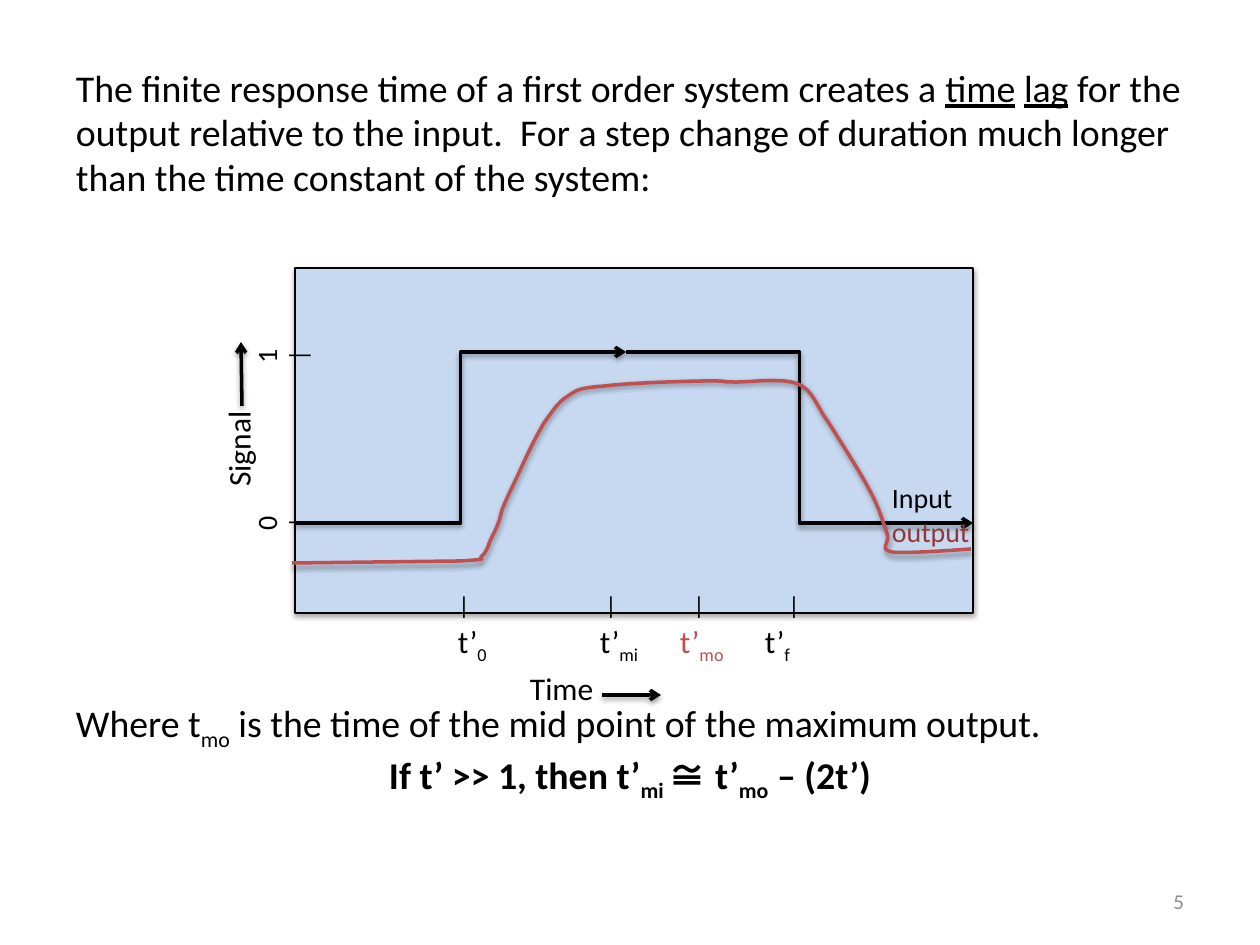
from dataclasses import dataclass

from lxml import etree
from pptx import Presentation
from pptx.dml.color import RGBColor
from pptx.enum.shapes import MSO_CONNECTOR, MSO_SHAPE
from pptx.enum.text import MSO_ANCHOR, PP_ALIGN
from pptx.oxml.ns import qn
from pptx.util import Emu, Pt

LINE, ELBOW = MSO_CONNECTOR.STRAIGHT, MSO_CONNECTOR.ELBOW
RECT = MSO_SHAPE.RECTANGLE
LEFT, MID, RIGHT = PP_ALIGN.LEFT, PP_ALIGN.CENTER, PP_ALIGN.RIGHT
TOP, CENTRE = MSO_ANCHOR.TOP, MSO_ANCHOR.MIDDLE
SCALE = 914400 / 126


@dataclass(frozen=True)
class Theme:
    """Colours, fonts and type sizes of the slide."""
    ink: str = "000000"
    panel: str = "C6D9F1"
    curve: str = "C0504D"
    dark: str = "953735"
    grey: str = "8C8C8C"
    font: str = "Calibri"
    math: str = "Noto Sans CJK JP"
    body: float = 21.6
    label: int = 18
    value: int = 16
    tick: int = 14
    small: int = 12


THEME = Theme()
CURVE = [
    (-3, 295), (-3, 295), (166, 293), (166, 293),
    (198, 291), (183, 291), (186, 289), (191, 286), (194, 276), (194, 276),
    (196, 270), (200, 264), (203, 256), (206, 250), (205, 245), (210, 235),
    (214, 225), (222, 210), (228, 196), (234, 183), (242, 167), (249, 155),
    (257, 144), (263, 134), (273, 128), (283, 121), (286, 120), (310, 118),
    (334, 115), (394, 113), (416, 113), (437, 113), (423, 114), (437, 114),
    (451, 115), (486, 109), (503, 116), (519, 123), (521, 138), (534, 155),
    (545, 173), (564, 202), (574, 221), (584, 239), (588, 254), (592, 265),
    (596, 275), (583, 281), (597, 284), (611, 286), (676, 281), (676, 281),
]


def px(n):
    """Turn px into EMU."""
    return Emu(round(n * SCALE))


def shade(shape, alpha):
    """Cast a soft shadow below a shape."""
    spot = etree.SubElement(shape._element.spPr, qn("a:effectLst"))
    cast = etree.SubElement(spot, qn("a:outerShdw"), blurRad="40000",
                            dist="20000", dir="5400000", rotWithShape="0")
    tint = etree.SubElement(cast, qn("a:srgbClr"), val=THEME.ink)
    etree.SubElement(tint, qn("a:alpha"), val=str(alpha * 1000))


def stroke(shape, width, color=THEME.ink):
    """Set the line of a shape."""
    shape.line.color.rgb = RGBColor.from_string(color)
    shape.line.width = Pt(width)


def link(slide, start, end, kind=LINE):
    """Draw an arrow with a shadow."""
    wire = slide.shapes.add_connector(kind, *map(px, (*start, *end)))
    stroke(wire, 2)
    etree.SubElement(wire.line._ln, qn("a:tailEnd"), type="arrow")
    shade(wire, 38)


def text(slide, box, lines, size, color=THEME.ink, align=LEFT, anchor=TOP,
         wrap=True, turn=0):
    """Write paragraphs of (words, style) runs into a box."""
    area = slide.shapes.add_textbox(*map(px, box))
    area.rotation = turn
    frame = area.text_frame
    frame.word_wrap, frame.vertical_anchor = wrap, anchor
    frame.margin_left = frame.margin_right = 0
    frame.margin_top = frame.margin_bottom = 0
    for i, line in enumerate(lines):
        para = frame.paragraphs[0] if i == 0 else frame.add_paragraph()
        para.alignment = align
        para.font.name, para.font.size = THEME.font, Pt(size)
        para.font.color.rgb = RGBColor.from_string(color)
        for words, style in line:
            run = para.add_run()
            run.text = words
            if style == "under":
                run.font.underline = True
            elif style == "sub":
                run._r.get_or_add_rPr().set("baseline", "-25000")
            elif style == "math":
                run.font.name = THEME.math
    return frame


def mark(slide, x, y, words, size, turn=0):
    """Write one word centred on a point."""
    text(slide, (x - 60, y - 20, 120, 40), [[(words, "")]], size,
         align=MID, anchor=CENTRE, turn=turn)


def trace(slide, x, y):
    """Draw the output as a smooth curve from groups of three points."""
    points = [(x + a, y + b) for a, b in CURVE]
    pen = slide.shapes.build_freeform(*points[0], scale=SCALE)
    pen.add_line_segments(points[1:], close=False)
    shape = pen.convert_to_shape()
    steps = list(shape._element.iter(qn("a:lnTo")))
    for first, *rest in zip(steps[::3], steps[1::3], steps[2::3]):
        first.tag = qn("a:cubicBezTo")
        for step in rest:
            first.append(step[0])
            step.getparent().remove(step)
    shape.fill.background()
    stroke(shape, 2, THEME.curve)
    shade(shape, 38)


def plot(slide, x, y, w, h):
    """Draw the panel with its input step, ticks, labels and output curve."""
    low, high, half = y + 255, y + 84, x + 331
    panel = slide.shapes.add_shape(RECT, *map(px, (x, y, w, h)))
    panel.fill.solid()
    panel.fill.fore_color.rgb = RGBColor.from_string(THEME.panel)
    stroke(panel, 0.75)
    shade(panel, 35)
    link(slide, (x, low), (half, high), ELBOW)
    link(slide, (half, high), (x + w, low), ELBOW)

    for name, spot in (("0", low), ("1", high + 4)):
        mark(slide, x + 2, spot, "|", THEME.tick, 270)
        mark(slide, x - 29, spot, name, THEME.value, 270)
    for tick, left, sub, color in ((169, 163, "0", THEME.ink),
                                   (316, 305, "mi", THEME.ink),
                                   (404, 385, "mo", THEME.curve),
                                   (499, 470, "f", THEME.ink)):
        mark(slide, x + tick, y + h - 8, "|", THEME.tick)
        text(slide, (x + left, y + h + 9, 60, 40),
             [[("t’", ""), (sub, "sub")]], THEME.label, color, wrap=False)

    mark(slide, x - 57, y + 181, "Signal", THEME.label, 270)
    link(slide, (x - 53, y + 138), (x - 54, y + 74))
    text(slide, (x + 235, y + h + 56, 66, 40), [[("Time", "")]], THEME.label,
         wrap=False)
    link(slide, (x + 307, y + h + 82), (x + 366, y + h + 82))
    key = text(slide, (x + 597, y + 213, 90, 70),
               [[("Input", "")], [("output", "")]], THEME.value, wrap=False)
    key.paragraphs[1].font.color.rgb = RGBColor.from_string(THEME.dark)
    trace(slide, x, y)


def intro(slide, x, y, w, h):
    """Write the opening statement."""
    frame = text(slide, (x, y, w, h), [[
        ("The finite response time of a first order system creates a ", ""),
        ("time", "under"), (" ", ""), ("lag", "under"),
        (" for the output relative to the input.  For a step change of "
         "duration much longer than the time constant of the system:", ""),
    ]], THEME.body)
    frame.paragraphs[0].line_spacing = 0.98


def result(slide, x, y, w, h):
    """Write the closing note and the centred formula."""
    frame = text(slide, (x, y, w, h), [
        [("Where t", ""), ("mo", "sub"),
         (" is the time of the mid point of the maximum output.", "")],
        [("If t’ >> 1, then t’", ""), ("mi ", "sub"), ("≅", "math"),
         (" t’", ""), ("mo", "sub"), (" – (2t’)", "")],
    ], THEME.body)
    last = frame.paragraphs[1]
    last.alignment, last.font.bold = MID, True


def main():
    """Build and save the slide."""
    deck = Presentation()
    deck.slide_width, deck.slide_height = px(1260), px(945)
    slide = deck.slides.add_slide(deck.slide_layouts[6])
    intro(slide, 76, 67, 1109, 140)
    plot(slide, 295, 268, 678, 345)
    result(slide, 76, 700, 1108, 110)
    text(slide, (903, 876, 281, 50), [[("5", "")]], THEME.small, THEME.grey,
         RIGHT, CENTRE)
    deck.save("out.pptx")


if __name__ == "__main__":
    main()
